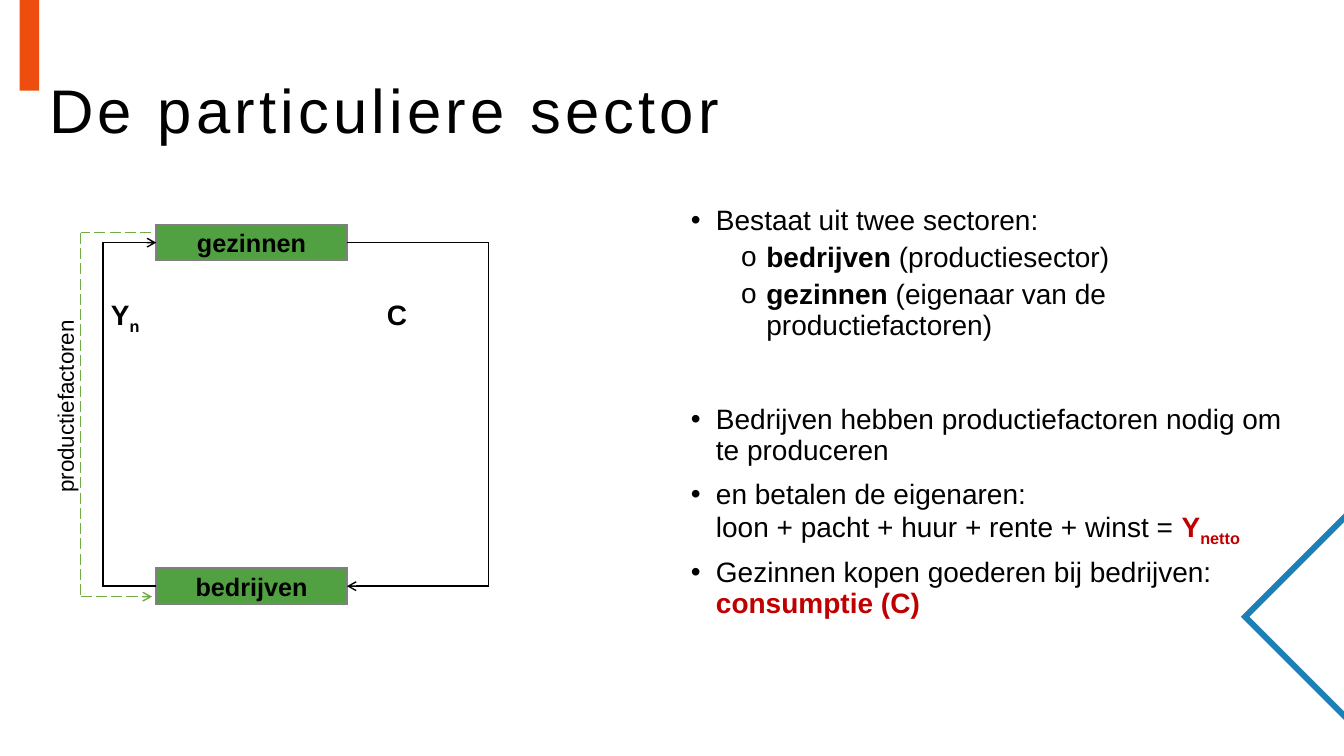
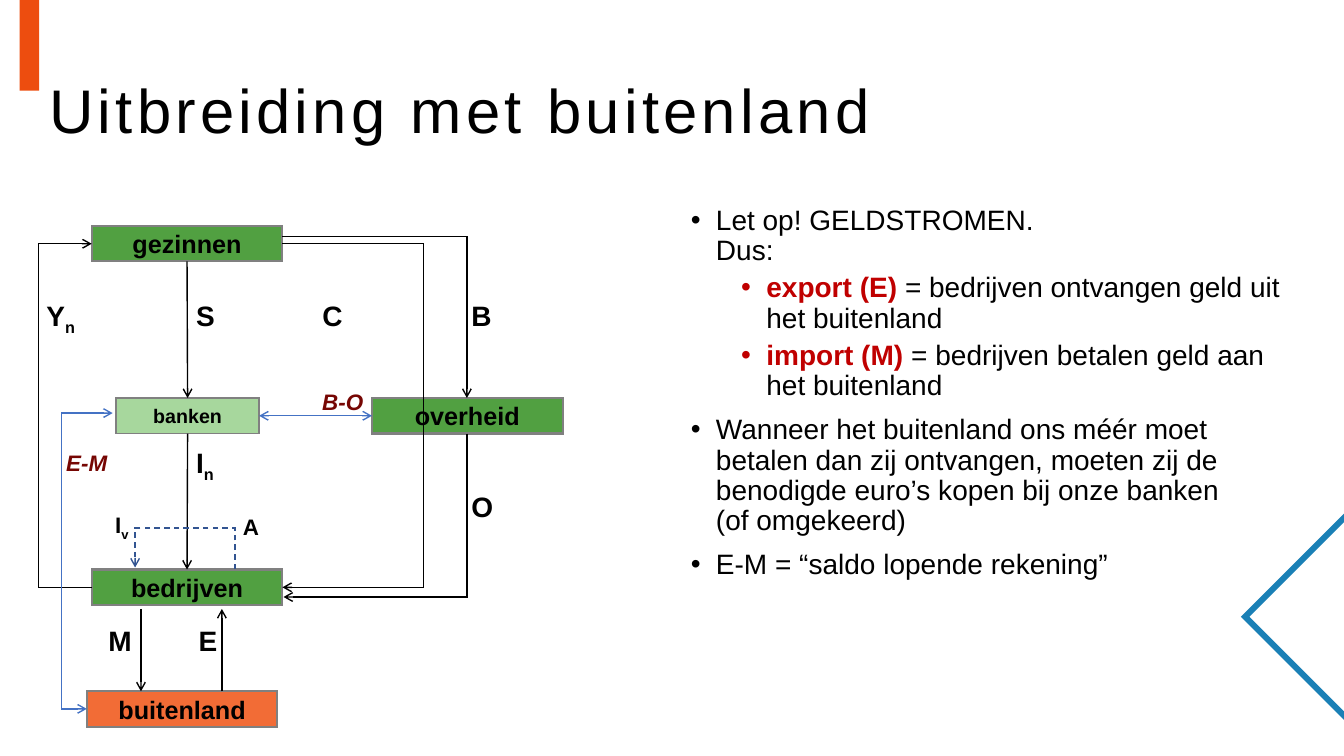
from dataclasses import dataclass
from typing import Any

from lxml import etree
from pptx import Presentation
from pptx.dml.color import RGBColor
from pptx.enum.dml import MSO_LINE
from pptx.enum.shapes import MSO_CONNECTOR, MSO_SHAPE
from pptx.enum.text import MSO_ANCHOR, PP_ALIGN
from pptx.oxml.ns import qn
from pptx.util import Pt

STRAIGHT = MSO_CONNECTOR.STRAIGHT
RECTANGLE = MSO_SHAPE.RECTANGLE
MIDDLE = MSO_ANCHOR.MIDDLE
LEFT, CENTER, RIGHT = PP_ALIGN.LEFT, PP_ALIGN.CENTER, PP_ALIGN.RIGHT
DASH, LONG_DASH = MSO_LINE.DASH, MSO_LINE.LONG_DASH
TOP_SIDE, LEFT_SIDE, BOTTOM_SIDE, RIGHT_SIDE = range(4)

FONT = "Arial"
BLACK = "000000"
GREEN, LIGHT_GREEN, ORANGE = "51A041", "A7D79D", "F26C36"
GRAY, BLUE, DARK_BLUE, LEAF = "808080", "4472C4", "325491", "70AD47"
BAR_COLOR, CHEVRON_COLOR = "ED4D0F", "1A80B6"
BOLD = {"bold": True}
RED = {"color": "C00000", "bold": True}
SUBSCRIPT = {"bold": True, "baseline": -25000}
RED_SUBSCRIPT = RED | SUBSCRIPT
BALANCE = {"color": "760603", "bold": True, "italic": True}

BOX_WIDTH, BOX_HEIGHT = 136.2, 25.4
ROW_GAP = 245.4
LABEL_WIDTH = 60
LABEL_TOP = 48.2
TITLE_BOX = (28.2, 29, 906, 104)
BODY_BOX = (486.3, 143.8, 445.7, 367)


def rgb(value):
    return RGBColor.from_string(value)


def add_run(paragraph, text, size, color=BLACK, bold=False, italic=False, baseline=0, spacing=0):
    run = paragraph.add_run()
    run.text = text
    font = run.font
    font.name, font.size, font.bold, font.italic = FONT, Pt(size), bold, italic
    font.color.rgb = rgb(color)
    for name, value in (("baseline", baseline), ("spc", spacing)):
        if value:
            run._r.get_or_add_rPr().set(name, str(value))


def add_text_box(slide, left, top, width, height):
    shape = slide.shapes.add_textbox(Pt(left), Pt(top), Pt(width), Pt(height))
    shape.text_frame.word_wrap = True
    return shape


def style_line(shape, color, width=1, dash=None, head=False, tail=False):
    line = shape.line
    line.color.rgb = rgb(color)
    line.width = Pt(width)
    if dash:
        line.dash_style = dash
    element = line._get_or_add_ln()
    etree.SubElement(element, qn("a:miter"), lim="800000")
    for name, wanted in (("a:headEnd", head), ("a:tailEnd", tail)):
        if wanted:
            etree.SubElement(element, qn(name), type="arrow")


def add_route(slide, points, color=BLACK, **style):
    corners = [(Pt(x), Pt(y)) for x, y in points]
    builder = slide.shapes.build_freeform(*corners[0], scale=1.0)
    builder.add_line_segments(corners[1:], close=False)
    shape = builder.convert_to_shape()
    shape.shadow.inherit = False
    shape.fill.background()
    style_line(shape, color, **style)


@dataclass
class Diagram:
    slide: Any
    left: float
    top: float

    def box(self, text, left, top, width=BOX_WIDTH, fill=GREEN, size=18, border=1.5):
        shape = self.slide.shapes.add_shape(
            RECTANGLE, Pt(self.left + left), Pt(self.top + top), Pt(width), Pt(BOX_HEIGHT))
        shape.shadow.inherit = False
        shape.fill.solid()
        shape.fill.fore_color.rgb = rgb(fill)
        style_line(shape, GRAY, border)
        shape.text_frame.vertical_anchor = MIDDLE
        paragraph = shape.text_frame.paragraphs[0]
        paragraph.alignment = CENTER
        add_run(paragraph, text, size, bold=True)
        return shape

    def label(self, runs, left, top, size=20, width=LABEL_WIDTH, align=LEFT):
        shape = add_text_box(self.slide, self.left + left, self.top + top, width, size * 1.2 + 7.2)
        paragraph = shape.text_frame.paragraphs[0]
        paragraph.alignment = align
        for text, style in runs:
            add_run(paragraph, text, size, **style)
        return shape

    def route(self, points, color=BLACK, **style):
        add_route(self.slide, [(self.left + x, self.top + y) for x, y in points], color, **style)

    def arrow(self, start=(0, 0), end=(0, 0), color=BLACK, joins=None, tail=True, **style):
        connector = self.slide.shapes.add_connector(
            STRAIGHT, Pt(self.left + start[0]), Pt(self.top + start[1]),
            Pt(self.left + end[0]), Pt(self.top + end[1]))
        if joins:
            (source, source_side), (target, target_side) = joins
            connector.begin_connect(source, source_side)
            connector.end_connect(target, target_side)
        style_line(connector, color, tail=tail, **style)
        etree.SubElement(connector._element.spPr, qn("a:effectLst"))


def draw_frame(slide, title):
    bar = slide.shapes.add_shape(RECTANGLE, Pt(14), Pt(0), Pt(14), Pt(64.8))
    bar.shadow.inherit = False
    bar.fill.solid()
    bar.fill.fore_color.rgb = rgb(BAR_COLOR)
    bar.line.fill.background()
    add_route(slide, [(962, 368), (889.4, 440.6), (962, 513.2)], CHEVRON_COLOR, width=4.25)
    frame = add_text_box(slide, *TITLE_BOX).text_frame
    frame.vertical_anchor = MIDDLE
    paragraph = frame.paragraphs[0]
    paragraph.line_spacing = 0.9
    add_run(paragraph, title, 44, spacing=300)


def draw_bullets(slide, box, items):
    frame = add_text_box(slide, *box).text_frame
    for index, (level, bullet, gap, runs) in enumerate(items):
        paragraph = frame.add_paragraph() if index else frame.paragraphs[0]
        paragraph.level = level
        paragraph.line_spacing = 0.9
        paragraph.space_before = Pt(gap)
        properties = paragraph._p.get_or_add_pPr()
        properties.set("marL", str(Pt(18 + 36 * level)))
        properties.set("indent", str(Pt(-18)))
        etree.SubElement(properties, qn("a:buFont"), typeface=FONT)
        etree.SubElement(properties, qn("a:buChar"), char=bullet)
        for text, style in runs:
            for number, line in enumerate(text.split("\n")):
                if number:
                    paragraph.add_line_break()
                add_run(paragraph, line, 20, **style)


def draw_circuit(diagram):
    households = diagram.box("gezinnen", 0, 0)
    companies = diagram.box("bedrijven", 0, ROW_GAP)
    upper = BOX_HEIGHT / 2
    lower = upper + ROW_GAP
    diagram.route([(0, lower), (-38, lower), (-38, upper), (0, upper)], tail=True)
    diagram.route([(BOX_WIDTH, upper), (237.2, upper), (237.2, lower), (BOX_WIDTH, lower)], tail=True)
    diagram.label([("Y", BOLD), ("n", SUBSCRIPT)], -39.5, LABEL_TOP)
    diagram.label([("C", BOLD)], 157.7, LABEL_TOP)
    return households, companies


def draw_private_sector(slide, left, top):
    diagram = Diagram(slide, left, top)
    draw_circuit(diagram)
    corners = [(-3.6, 5.7), (-54, 5.7), (-54, 265.6), (-3, 265.6)]
    for start, end in zip(corners, corners[1:]):
        diagram.arrow(start, end, LEAF, dash=LONG_DASH, tail=end == corners[-1])
    factors = diagram.label([("productiefactoren", {})], -144.7, 105.8, size=16, width=159)
    factors.rotation = 270


def draw_open_economy(slide, left, top):
    diagram = Diagram(slide, left, top)
    bank_top, abroad_top, tax_line = 122.9, 332.4, 268
    banks = diagram.box("banken", 17.4, bank_top, 102.2, LIGHT_GREEN, 14, 1)
    government = diagram.box("overheid", 200.2, bank_top)
    diagram.box("buitenland", -3.5, abroad_top, fill=ORANGE)
    households, companies = draw_circuit(diagram)

    diagram.arrow(joins=((households, BOTTOM_SIDE), (banks, TOP_SIDE)))
    diagram.arrow(joins=((banks, BOTTOM_SIDE), (companies, TOP_SIDE)))
    diagram.arrow(color=BLUE, joins=((banks, RIGHT_SIDE), (government, LEFT_SIDE)), head=True)
    diagram.arrow((35.2, 273.6), (35.2, abroad_top))
    diagram.arrow((93, abroad_top), (93, 273.6))

    diagram.route([(BOX_WIDTH, 7.7), (tax_line, 7.7), (tax_line, bank_top)], tail=True)
    diagram.route([(tax_line, bank_top + BOX_HEIGHT), (tax_line, 265), (137, 265)], tail=True)
    diagram.route([(-3.5, 345), (-21.5, 345), (-21.5, 133.7), (15, 133.7)], BLUE, head=True, tail=True)
    diagram.route([(102.4, ROW_GAP), (102.4, 215.8), (31, 215.8), (31, 244)],
                  DARK_BLUE, dash=DASH, tail=True)

    for text, x, y in (("S", 67.5, LABEL_TOP), ("B", 264.2, LABEL_TOP), ("O", 264.2, 184.8),
                       ("M", 4.8, 280.6), ("E", 69.3, 280.6)):
        diagram.label([(text, BOLD)], x, y)
    diagram.label([("I", BOLD), ("n", SUBSCRIPT)], 67.5, 153.2)
    diagram.label([("I", BOLD), ("v", SUBSCRIPT)], -26.7, 200.2, size=16, align=RIGHT)
    diagram.label([("A", BOLD)], 100.8, 201.6, size=16)
    diagram.label([("E-M", BALANCE)], -25.3, 156.2, size=16)
    diagram.label([("B-O", BALANCE)], 157.6, 112.2, size=16)


PRIVATE_SECTOR_BULLETS = [
    (0, "•", 10, [("Bestaat uit twee sectoren:", {})]),
    (1, "o", 5, [("bedrijven", BOLD), (" (productiesector)", {})]),
    (1, "o", 5, [("gezinnen", BOLD), (" (eigenaar van de productiefactoren)", {})]),
    (0, "•", 46, [("Bedrijven hebben productiefactoren nodig om te produceren", {})]),
    (0, "•", 10, [("en betalen de eigenaren:\nloon + pacht + huur + rente + winst = ", {}),
                  ("Y", RED), ("netto", RED_SUBSCRIPT)]),
    (0, "•", 10, [("Gezinnen kopen goederen bij bedrijven: ", {}), ("consumptie (C)", RED)]),
]
OPEN_ECONOMY_BULLETS = [
    (0, "•", 10, [("Let op! GELDSTROMEN.\nDus:", {})]),
    (1, "•", 5, [("export (E)", RED), (" = bedrijven ontvangen geld uit het buitenland", {})]),
    (1, "•", 5, [("import (M)", RED), (" = bedrijven betalen geld aan het buitenland", {})]),
    (0, "•", 10, [("Wanneer het buitenland ons méér moet betalen dan zij ontvangen, moeten zij de "
                   "benodigde euro’s kopen bij onze banken\n(of omgekeerd)", {})]),
    (0, "•", 10, [("E-M = “saldo lopende rekening”", {})]),
]
SLIDES = [
    ("De particuliere sector", PRIVATE_SECTOR_BULLETS, draw_private_sector, (111.6, 160.6)),
    ("Uitbreiding met buitenland", OPEN_ECONOMY_BULLETS, draw_open_economy, (65.5, 161.4)),
]


def main():
    presentation = Presentation()
    presentation.slide_width, presentation.slide_height = Pt(960), Pt(540)
    for title, bullets, draw_diagram, origin in SLIDES:
        slide = presentation.slides.add_slide(presentation.slide_layouts[6])
        draw_frame(slide, title)
        draw_bullets(slide, BODY_BOX, bullets)
        draw_diagram(slide, *origin)
    presentation.save("out.pptx")


if __name__ == "__main__":
    main()
